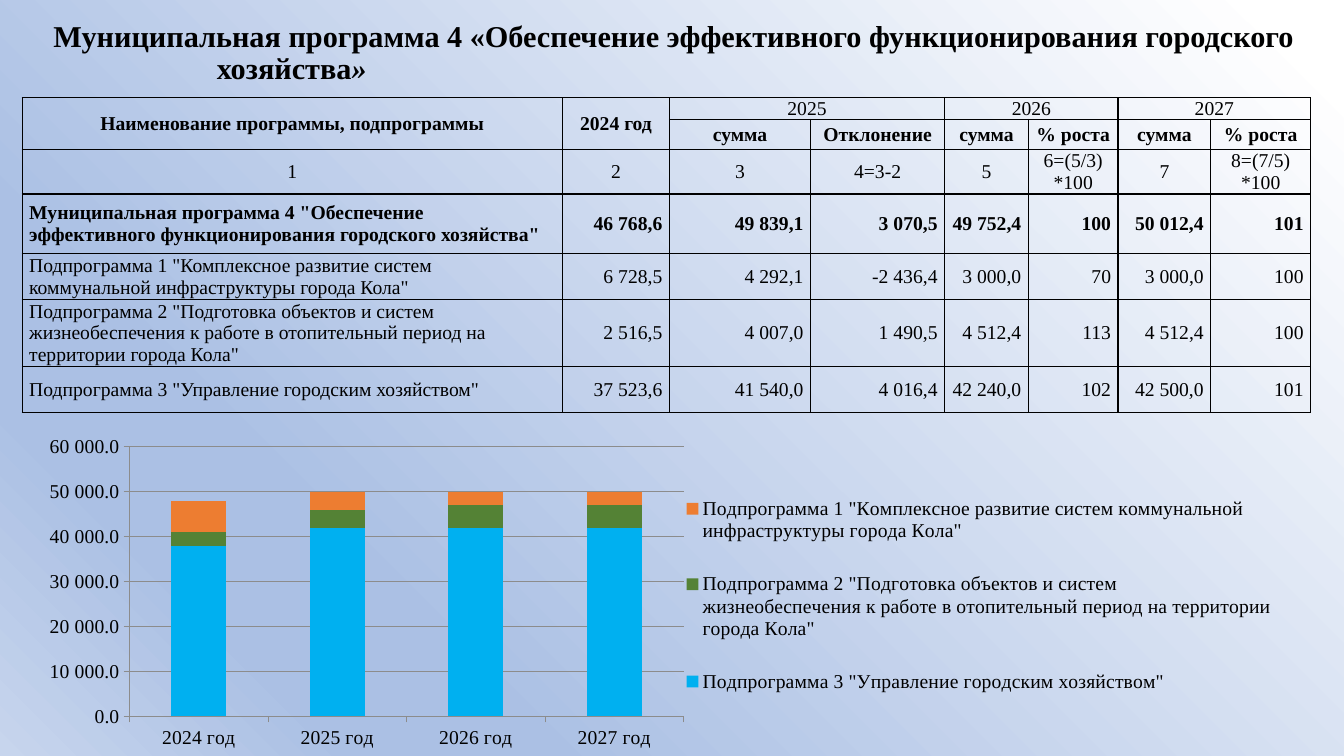
from lxml import etree
from pptx import Presentation
from pptx.chart.data import CategoryChartData
from pptx.dml.color import RGBColor
from pptx.enum.chart import XL_CHART_TYPE, XL_LEGEND_POSITION, XL_TICK_MARK
from pptx.enum.text import MSO_ANCHOR, MSO_AUTO_SIZE, PP_ALIGN
from pptx.oxml import parse_xml
from pptx.oxml.ns import nsdecls, qn
from pptx.util import Inches, Pt

LEFT, CENTER, RIGHT = PP_ALIGN.LEFT, PP_ALIGN.CENTER, PP_ALIGN.RIGHT
MIDDLE, TOP = MSO_ANCHOR.MIDDLE, MSO_ANCHOR.TOP
STACKED, LEGEND_RIGHT = XL_CHART_TYPE.COLUMN_STACKED, XL_LEGEND_POSITION.RIGHT
OUTSIDE, NO_AUTOFIT = XL_TICK_MARK.OUTSIDE, MSO_AUTO_SIZE.NONE

FONT = "Times New Roman"
COLORS = {"text": "000000", "axis": "8C8C8C", "sub1": "ED7D31", "sub2": "548235", "sub3": "00B0F0"}
BACKGROUND = [(4, "FFFFFF"), (74, "ABC0E4"), (83, "ABC0E4"), (100, "C7D5ED")]

TITLE = ("Муниципальная программа 4 «Обеспечение эффективного функционирования городского хозяйства", "»")
HEADER = [
    ["Наименование программы, подпрограммы", "2024 год", "2025", "", "2026", "", "2027", ""],
    ["", "", "сумма", "Отклонение", "сумма", "% роста", "сумма", "% роста"],
    ["1", "2", "3", "4=3-2", "5", "6=(5/3)\n*100", "7", "8=(7/5)\n*100"],
]
PROGRAM = ['Муниципальная программа 4 "Обеспечение эффективного функционирования городского хозяйства"',
           46768.6, 49839.1, 3070.5, 49752.4, 100, 50012.4, 101]
SUBPROGRAMS = [
    ['Подпрограмма 1 "Комплексное развитие систем коммунальной инфраструктуры города Кола"',
     6728.5, 4292.1, -2436.4, 3000.0, 70, 3000.0, 100],
    ['Подпрограмма 2 "Подготовка объектов и систем жизнеобеспечения к работе в отопительный период '
     'на территории города Кола"',
     2516.5, 4007.0, 1490.5, 4512.4, 113, 4512.4, 100],
    ['Подпрограмма 3 "Управление городским хозяйством"',
     37523.6, 41540.0, 4016.4, 42240.0, 102, 42500.0, 101],
]
MERGES = [(0, 0, 1, 0), (0, 1, 1, 1), (0, 2, 0, 3), (0, 4, 0, 5), (0, 6, 0, 7)]
BOLD_CELLS = {(0, 0), (0, 1)} | {(row, col) for row in (1, 3) for col in range(8)}
COLUMN_WIDTHS = [5.36, 1.06, 1.4, 1.33, 0.83, 0.89, 0.92, 0.99]
ROW_HEIGHTS = [0.21, 0.3, 0.44, 0.59, 0.46, 0.66, 0.46]
YEAR_COLUMNS = {"2024 год": 1, "2025 год": 2, "2026 год": 4, "2027 год": 6}
PLOT_SHARE = {"x": 0.085, "y": 0.038, "w": 0.439, "h": 0.839}
LEGEND_SHARE = {"x": 0.523, "y": 0.1, "w": 0.47, "h": 0.8}


def style(font, size, bold=False):
    font.name, font.size, font.bold = FONT, Pt(size), bold
    font.color.rgb = RGBColor.from_string(COLORS["text"])


def paint_background(slide):
    slide.background.fill.gradient()
    gradient = slide.background._cSld.find(".//" + qn("a:gradFill"))
    stop_list = gradient.find(qn("a:gsLst"))
    for stop in list(stop_list):
        stop_list.remove(stop)
    for position, color in BACKGROUND:
        stop = etree.SubElement(stop_list, qn("a:gs"), pos=str(position * 1000))
        etree.SubElement(stop, qn("a:srgbClr"), val=color)
    gradient.find(qn("a:lin")).set("ang", str(135 * 60000))


def add_title(slide):
    title = slide.shapes.title
    title.left, title.top, title.width, title.height = map(Inches, (0.36, 0.21, 12.64, 0.74))
    frame = title.text_frame
    frame.auto_size, frame.word_wrap, frame.vertical_anchor = NO_AUTOFIT, True, TOP
    frame.margin_top = frame.margin_bottom = frame.margin_right = 0
    heading = frame.paragraphs[0]
    heading.alignment, heading.line_spacing = LEFT, 0.9
    style(heading.font, 21.6, True)
    name, closing_quote = heading.add_run(), heading.add_run()
    name.text, closing_quote.text = TITLE
    closing_quote.font.italic = True
    indents = heading._p.get_or_add_pPr()
    indents.set("marL", str(Inches(1.69)))
    indents.set("indent", str(Inches(-1.62)))


def shown(value):
    return f"{value:,.1f}".replace(",", chr(160)).replace(".", ",") if isinstance(value, float) else str(value)


def add_borders(cell):
    properties = cell._tc.get_or_add_tcPr()
    for index, side in enumerate(("lnL", "lnR", "lnT", "lnB")):
        properties.insert(index, parse_xml(
            f'<a:{side} {nsdecls("a")} w="{Pt(1)}"><a:solidFill>'
            f'<a:srgbClr val="{COLORS["text"]}"/></a:solidFill></a:{side}>'))


def add_budget_table(slide):
    rows = HEADER + [PROGRAM] + SUBPROGRAMS
    table = slide.shapes.add_table(
        len(rows), len(COLUMN_WIDTHS), Inches(0.22), Inches(0.97),
        Inches(sum(COLUMN_WIDTHS)), Inches(sum(ROW_HEIGHTS))).table
    table.first_row = table.horz_banding = False
    for column, width in zip(table.columns, COLUMN_WIDTHS):
        column.width = Inches(width)
    for r, values in enumerate(rows):
        table.rows[r].height = Inches(ROW_HEIGHTS[r])
        for c, value in enumerate(values):
            cell = table.cell(r, c)
            cell.text = shown(value)
            cell.vertical_anchor = MIDDLE
            cell.margin_left = cell.margin_right = Inches(0.07)
            cell.margin_top = cell.margin_bottom = 0
            cell.fill.background()
            add_borders(cell)
            for paragraph in cell.text_frame.paragraphs:
                paragraph.alignment = CENTER if r < len(HEADER) else RIGHT if c else LEFT
                style(paragraph.font, 14, (r, c) in BOLD_CELLS)
    for top, left, bottom, right in MERGES:
        table.cell(top, left).merge(table.cell(bottom, right))


def place(element, share, inner=False):
    target = '<c:layoutTarget val="inner"/>' if inner else ""
    modes = "".join(f'<c:{side}Mode val="edge"/>' for side in "xy")
    sizes = "".join(f'<c:{side} val="{value}"/>' for side, value in share.items())
    for old in element.findall(qn("c:layout")):
        element.remove(old)
    layout = parse_xml(f'<c:layout {nsdecls("c")}><c:manualLayout>{target}{modes}{sizes}'
                       '</c:manualLayout></c:layout>')
    element.insert(0 if inner else 1, layout)


def axis_line(line):
    line.color.rgb = RGBColor.from_string(COLORS["axis"])
    line.width = Pt(0.5)


def add_budget_chart(slide):
    data = CategoryChartData(number_format="0.0")
    data.categories = list(YEAR_COLUMNS)
    for subprogram in reversed(SUBPROGRAMS):
        data.add_series(subprogram[0], [round(subprogram[c], -3) for c in YEAR_COLUMNS.values()])
    chart = slide.shapes.add_chart(
        STACKED, Inches(0.22), Inches(4.31), Inches(12.52), Inches(3.19), data).chart
    chart.has_title = False
    style(chart.font, 14)
    plot = chart.plots[0]
    plot.gap_width, plot.overlap, plot.vary_by_categories = 150, 100, False
    for series, key in zip(plot.series, ("sub3", "sub2", "sub1")):
        series.format.fill.solid()
        series.format.fill.fore_color.rgb = RGBColor.from_string(COLORS[key])
    for axis in (chart.category_axis, chart.value_axis):
        axis.major_tick_mark = OUTSIDE
        style(axis.tick_labels.font, 14)
        axis_line(axis.format.line)
    amounts = chart.value_axis
    amounts.minimum_scale, amounts.maximum_scale, amounts.major_unit = 0, 60000, 10000
    amounts.has_major_gridlines = True
    axis_line(amounts.major_gridlines.format.line)
    amounts.tick_labels.number_format = r"#\ ##0.0"
    amounts.tick_labels.number_format_is_linked = False
    chart.has_legend = True
    chart.legend.position, chart.legend.include_in_layout = LEGEND_RIGHT, False
    style(chart.legend.font, 14)
    place(chart._chartSpace.find(".//" + qn("c:plotArea")), PLOT_SHARE, inner=True)
    place(chart._chartSpace.find(".//" + qn("c:legend")), LEGEND_SHARE)


def main():
    deck = Presentation()
    deck.slide_width, deck.slide_height = Inches(13.33), Inches(7.5)
    slide = deck.slides.add_slide(deck.slide_layouts[5])
    paint_background(slide)
    add_title(slide)
    add_budget_chart(slide)
    add_budget_table(slide)
    deck.save("out.pptx")


if __name__ == "__main__":
    main()
